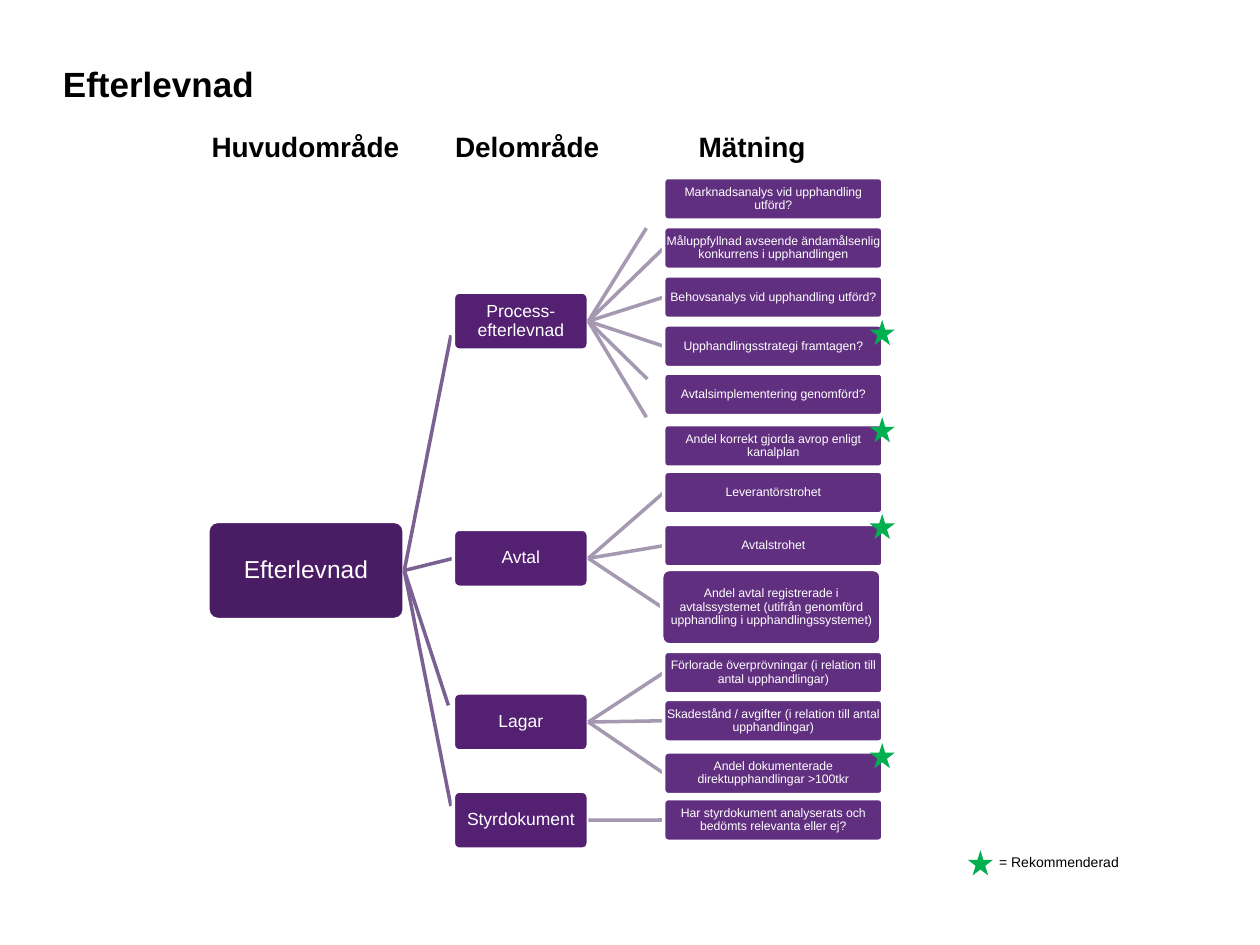
from dataclasses import dataclass

from lxml import etree
from pptx import Presentation
from pptx.dml.color import RGBColor
from pptx.enum.shapes import MSO_CONNECTOR, MSO_SHAPE
from pptx.enum.text import MSO_ANCHOR, PP_ALIGN
from pptx.oxml.ns import qn
from pptx.util import Cm, Pt

STRAIGHT = MSO_CONNECTOR.STRAIGHT
ROUND, STAR = MSO_SHAPE.ROUNDED_RECTANGLE, MSO_SHAPE.STAR_5_POINT
MIDDLE, TOP = MSO_ANCHOR.MIDDLE, MSO_ANCHOR.TOP
CENTER = PP_ALIGN.CENTER
LEFT_SIDE, RIGHT_SIDE = 1, 3


def rgb(code):
    return RGBColor.from_string(code)


@dataclass(frozen=True)
class Theme:
    font: str = "Arial"
    ink: RGBColor = rgb("000000")
    white: RGBColor = rgb("FFFFFF")
    root: RGBColor = rgb("4A1C64")
    branch: RGBColor = rgb("542071")
    leaf: RGBColor = rgb("612F7F")
    trunk: RGBColor = rgb("7B6191")
    twig: RGBColor = rgb("A599B2")
    star: RGBColor = rgb("00B050")
    title_size: int = 20
    head_size: int = 16
    root_size: int = 14
    branch_size: int = 10
    leaf_size: int = 7
    key_size: int = 8


THEME = Theme()

ROOT_BOX = (0, 6.93, 3.96, 1.98)
BRANCH_X, BRANCH_W, BRANCH_H = 4.95, 2.72, 1.17
LEAF_X, LEAF_W, LEAF_H = 9.19, 4.42, 0.86
TALL_SHIFT, TALL_H = -0.04, 1.52
STAR_SIZE, STAR_X = 0.51, 13.34
STAR_TOPS = (2.87, 4.83, 6.78, 11.4)

# Branch: text, top, loose line end (None = joined to the box), leaves.
# Leaf: text, top, loose line end.
TREE = [
    ("Process-efterlevnad", 2.31, (4.9, 3.18), [
        ("Marknadsanalys vid upphandling utförd?", 0, (8.84, 1.02)),
        ("Måluppfyllnad avseende ändamålsenlig konkurrens i upphandlingen", 0.99, None),
        ("Behovsanalys vid upphandling utförd?", 1.98, None),
        ("Upphandlingsstrategi framtagen?", 2.97, None),
        ("Avtalsimplementering genomförd?", 3.94, (8.86, 4.06)),
        ("Andel korrekt gjorda avrop enligt kanalplan", 4.98, (8.84, 4.83)),
    ]),
    ("Avtal", 7.09, None, [
        ("Leverantörstrohet", 5.92, None),
        ("Avtalstrohet", 6.99, None),
        ("Andel avtal registrerade i avtalssystemet (utifrån genomförd "
         "upphandling i upphandlingssystemet)", 7.9, None),
    ]),
    ("Lagar", 10.39, (4.85, 10.64), [
        ("Förlorade överprövningar (i relation till antal upphandlingar)", 9.55, None),
        ("Skadestånd / avgifter (i relation till antal upphandlingar)", 10.52, None),
        ("Andel dokumenterade direktupphandlingar >100tkr", 11.58, None),
    ]),
    ("Styrdokument", 12.37, (4.9, 12.67), [
        ("Har styrdokument analyserats och bedömts relevanta eller ej?", 12.52, None),
    ]),
]
TALL_TEXT = TREE[1][3][2][0]


def style(para, size, color, bold=False):
    font = para.font
    font.name, font.size, font.bold = THEME.font, Pt(size), bold
    font.color.rgb = color


def add_text(slide, box, text, size, anchor, bold=False, inset=None):
    frame = slide.shapes.add_textbox(*map(Cm, box)).text_frame
    frame.word_wrap = True
    frame.vertical_anchor = anchor
    if inset is not None:
        frame.margin_left = frame.margin_right = Cm(inset)
        frame.margin_top = frame.margin_bottom = Cm(inset)
    frame.text = text
    style(frame.paragraphs[0], size, THEME.ink, bold)


def add_node(slide, box, text, size, fill, inset=0):
    node = slide.shapes.add_shape(ROUND, *map(Cm, box))
    node.adjustments[0] = 0.1
    node.shadow.inherit = False
    node.fill.solid()
    node.fill.fore_color.rgb = fill
    node.line.color.rgb = THEME.white
    node.line.width = Pt(2)
    frame = node.text_frame
    frame.word_wrap = True
    frame.vertical_anchor = MIDDLE
    frame.margin_left = frame.margin_right = Cm(inset)
    frame.margin_top = frame.margin_bottom = Cm(inset)
    frame.text = text
    para = frame.paragraphs[0]
    para.alignment, para.line_spacing = CENTER, 0.9
    style(para, size, THEME.white)
    return node


def add_star(slide, left, top):
    star = slide.shapes.add_shape(STAR, Cm(left), Cm(top), Cm(STAR_SIZE), Cm(STAR_SIZE))
    star.shadow.inherit = False
    star.fill.solid()
    star.fill.fore_color.rgb = THEME.star
    star.line.fill.background()


def add_child(slide, parent, color, end, *node):
    """Add a node in front of the line that leads to it from its parent."""
    line = slide.shapes.add_connector(STRAIGHT, 0, 0, 0, 0)
    line.line.color.rgb = color
    line.line.width = Pt(2)
    etree.SubElement(line.element.spPr, qn("a:effectLst"))
    child = add_node(slide, *node)
    line.begin_connect(parent, RIGHT_SIDE)
    if end:
        line.end_x, line.end_y = map(Cm, end)
    else:
        line.end_connect(child, LEFT_SIDE)
    return child


def add_tree(slide, left, top):
    def place(x, y, *size):
        return (left + x, top + y, *size)

    root = add_node(slide, place(*ROOT_BOX), "Efterlevnad",
                    THEME.root_size, THEME.root, 0.03)
    for name, y, end, leaves in TREE:
        branch = add_child(slide, root, THEME.trunk, end and place(*end),
                           place(BRANCH_X, y, BRANCH_W, BRANCH_H),
                           name, THEME.branch_size, THEME.branch, 0.03)
        for text, leaf_y, tip in leaves:
            tall = text == TALL_TEXT
            box = place(LEAF_X + (TALL_SHIFT if tall else 0), leaf_y,
                        LEAF_W, TALL_H if tall else LEAF_H)
            add_child(slide, branch, THEME.twig, tip and place(*tip),
                      box, text, THEME.leaf_size, THEME.leaf)
    for y in STAR_TOPS:
        add_star(slide, *place(STAR_X, y))


def add_heads(slide, box):
    names = ("Huvudområde", "Delområde", "Mätning")
    table = slide.shapes.add_table(1, len(names), *map(Cm, box)).table
    for cell, name in zip(table.rows[0].cells, names):
        cell.fill.background()
        cell.text = name
        style(cell.text_frame.paragraphs[0], THEME.head_size, THEME.ink, True)


def add_key(slide, left, top):
    add_star(slide, left, top)
    add_text(slide, (left + 0.38, top - 0.02, 4.06, 0.53), "= Rekommenderad",
             THEME.key_size, MIDDLE)


def main():
    deck = Presentation()
    deck.slide_width, deck.slide_height = Cm(25.4), Cm(19.05)
    slide = deck.slides.add_slide(deck.slide_layouts[6])
    add_text(slide, (1.27, 1.27, 22.86, 2.31), "Efterlevnad",
             THEME.title_size, TOP, True, 0)
    add_tree(slide, 4.19, 3.58)
    add_heads(slide, (4.01, 2.54, 14.73, 1.04))
    add_key(slide, 19.51, 17.14)
    deck.save("out.pptx")


if __name__ == "__main__":
    main()
